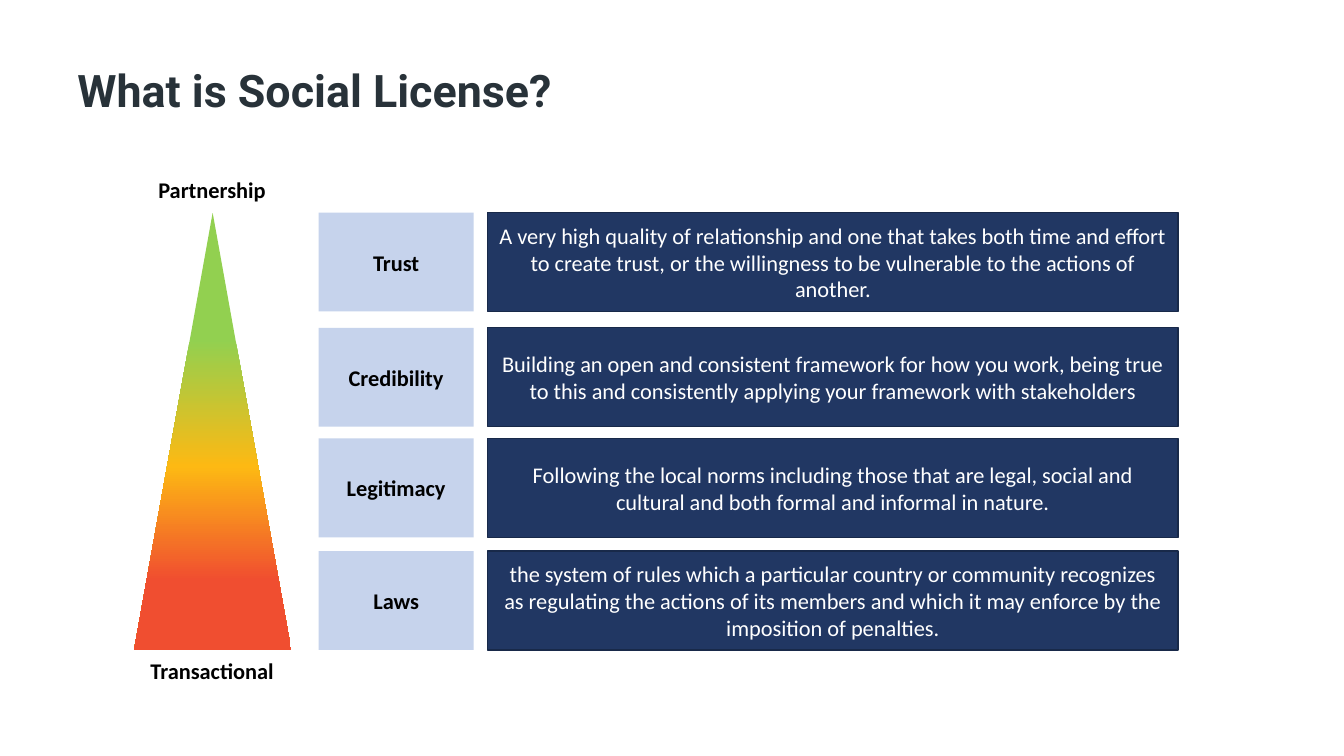
from copy import deepcopy
from dataclasses import dataclass

from pptx import Presentation
from pptx.dml.color import RGBColor
from pptx.enum import shapes, text
from pptx.oxml.ns import qn
from pptx.util import Cm, Pt


@dataclass(frozen=True)
class Theme:
    ink: str = "283239"
    black: str = "000000"
    white: str = "FFFFFF"
    pale: str = "C6D3EC"
    navy: str = "213763"
    edge: str = "182949"
    ramp: tuple = ((0.29, "92D050"), (0.58, "FDB913"), (0.84, "F04E30"))
    head: int = 32
    body: int = 16
    head_font: str = "Roboto"
    body_font: str = "Calibri"


THEME = Theme()

# Top in cm, term, meaning
LEVELS = (
    (5.36, "Trust",
     "A very high quality of relationship and one that takes both time and "
     "effort to create trust, or the willingness to be vulnerable to the "
     "actions of another."),
    (8.26, "Credibility",
     "Building an open and consistent framework for how you work, being true "
     "to this and consistently applying your framework with stakeholders"),
    (11.05, "Legitimacy",
     "Following the local norms including those that are legal, social and "
     "cultural and both formal and informal in nature."),
    (13.89, "Laws",
     "the system of rules which a particular country or community recognizes "
     "as regulating the actions of its members and which it may enforce by "
     "the imposition of penalties."),
)


def rgb(code):
    return RGBColor.from_string(code)


def write(shape, words, color, bold=False, size=THEME.body,
          font=THEME.body_font, align=text.PP_ALIGN.CENTER,
          anchor=text.MSO_ANCHOR.MIDDLE):
    """Fill a shape with one styled paragraph and return it."""
    frame = shape.text_frame
    frame.word_wrap = True
    frame.vertical_anchor = anchor
    frame.text = words
    para = frame.paragraphs[0]
    para.alignment = align
    face = para.runs[0].font
    face.name, face.size, face.bold = font, Pt(size), bold
    face.color.rgb = rgb(color)
    return para


def add_title(slide, words):
    box = slide.shapes.add_textbox(Cm(1.7), Cm(0.76), Cm(30.48), Cm(3.18))
    para = write(box, words, THEME.ink, True, THEME.head, THEME.head_font,
                 text.PP_ALIGN.LEFT)
    para.line_spacing = 0.9


def add_label(slide, top, words):
    box = slide.shapes.add_textbox(Cm(3.2), Cm(top), Cm(4.29), Cm(0.94))
    write(box, words, THEME.black, True, anchor=text.MSO_ANCHOR.TOP)


def add_box(slide, left, top, width, words, fill, color, edge=None, bold=False):
    box = slide.shapes.add_shape(shapes.MSO_SHAPE.RECTANGLE, Cm(left), Cm(top),
                                 Cm(width), Cm(2.49))
    box.shadow.inherit = False
    box.fill.solid()
    box.fill.fore_color.rgb = rgb(fill)
    if edge:
        box.line.color.rgb = rgb(edge)
        box.line.width = Pt(1)
    else:
        box.line.fill.background()
    write(box, words, color, bold)


def add_level(slide, top, term, meaning):
    add_box(slide, 8.03, top, 3.91, term, THEME.pale, THEME.black, bold=True)
    add_box(slide, 12.29, top, 17.4, meaning, THEME.navy, THEME.white,
            THEME.edge)


def add_spire(slide):
    """Draw the tall triangle, shaded from green at the tip to red."""
    spire = slide.shapes.add_shape(shapes.MSO_SHAPE.ISOSCELES_TRIANGLE,
                                   Cm(3.38), Cm(5.36), Cm(3.96), Cm(11.02))
    spire.shadow.inherit = False
    spire.line.fill.background()
    fill = spire.fill
    fill.gradient()
    fill.gradient_angle = 270
    stops = next(spire._element.spPr.iter(qn("a:gsLst")))
    stops.append(deepcopy(stops[0]))
    for stop, (place, color) in zip(fill.gradient_stops, THEME.ramp):
        stop.position = place
        stop.color.rgb = rgb(color)


def main():
    deck = Presentation()
    deck.slide_width, deck.slide_height = Cm(33.87), Cm(19.05)
    slide = deck.slides.add_slide(deck.slide_layouts[6])
    add_title(slide, "What is Social License?")
    for level in LEVELS:
        add_level(slide, *level)
    add_spire(slide)
    add_label(slide, 4.32, "Partnership")
    add_label(slide, 16.43, "Transactional")
    deck.save("out.pptx")


if __name__ == "__main__":
    main()
